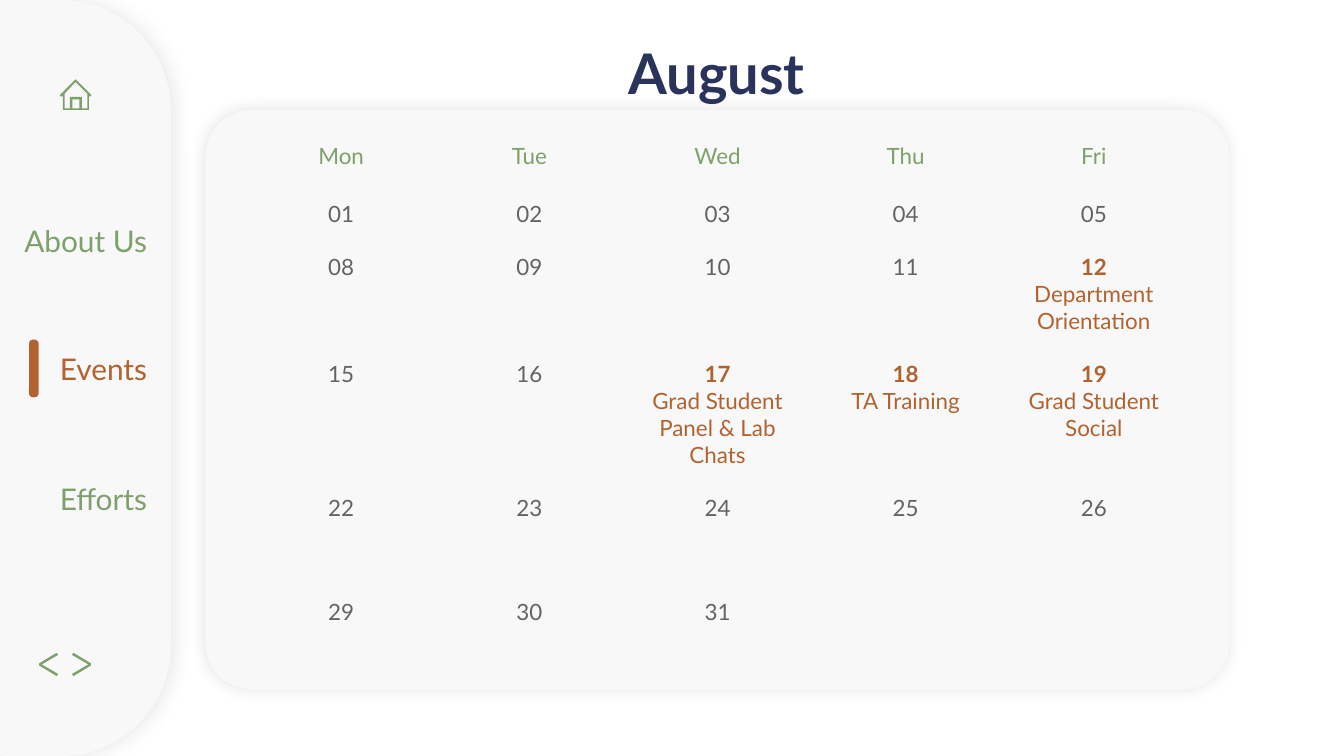
from lxml.etree import SubElement
from pptx import Presentation
from pptx.dml.color import RGBColor
from pptx.enum.shapes import MSO_SHAPE as Shape
from pptx.enum.text import MSO_ANCHOR as Anchor, MSO_AUTO_SIZE as AutoSize, PP_ALIGN as Align
from pptx.oxml.ns import qn
from pptx.util import Cm, Pt

PALE = RGBColor(0xF8, 0xF8, 0xF8)
NAVY = RGBColor(0x29, 0x33, 0x5C)
GREEN = RGBColor(0x7E, 0xA1, 0x6B)
RUST = RGBColor(0xB2, 0x62, 0x2F)
GREY = RGBColor(0x63, 0x63, 0x63)
SHADE = RGBColor(0x43, 0x43, 0x43)

FONT = "Lato"
INSET = Cm(0.25)
NO_STYLE = "{2D5ABB26-0587-4C30-8999-92F81FD0307C}"

DAYS = ["Mon", "Tue", "Wed", "Thu", "Fri"]
LAST_DATE = 31
EVENTS = {
    12: "Department Orientation",
    17: "Grad Student Panel & Lab Chats",
    18: "TA Training",
    19: "Grad Student Social",
}
ROW_HEIGHTS = [1.19, 0.91, 1.37, 1.96, 1.96, 1.96]
MENU = [("About Us", 4, GREEN), ("Events", 6.42, RUST), ("Efforts", 8.88, GREEN)]

# Icon outlines, in hundredths of a centimetre
HOUSE = [
    [(143, 150), (173, 180), (170, 183), (168, 181), (168, 208),
     (119, 208), (119, 181), (116, 183), (113, 180)],
    [(143, 155), (165, 177), (165, 205), (155, 205), (155, 183),
     (132, 183), (132, 205), (122, 205), (122, 177)],
    [(137, 188), (150, 188), (150, 205), (137, 205)],
]
BACK = [[(107, 1234), (110, 1238), (79, 1256), (110, 1274), (107, 1278),
         (74, 1258), (74, 1254)]]
NEXT = [[(246 - x, y) for x, y in BACK[0]]]


def add_run(para, text, size, color, bold=False):
    span = para.add_run()
    span.text = text
    font = span.font
    font.name, font.size, font.bold = FONT, Pt(size), bold
    font.color.rgb = color


def set_insets(frame):
    """Give a text frame or a table cell the same inset on all sides."""
    frame.margin_left = frame.margin_right = INSET
    frame.margin_top = frame.margin_bottom = INSET


def paint(shape, color):
    shape.shadow.inherit = False
    shape.fill.solid()
    shape.fill.fore_color.rgb = color
    shape.line.fill.background()


def add_panel(page, left, top, width, height, rounding, color):
    panel = page.shapes.add_shape(
        Shape.ROUNDED_RECTANGLE, Cm(left), Cm(top), Cm(width), Cm(height))
    panel.adjustments[0] = rounding
    paint(panel, color)
    return panel


def add_shadow(shape, color, opacity, blur, distance):
    effects = shape._element.spPr.find(qn("a:effectLst"))
    shadow = SubElement(effects, qn("a:outerShdw"), blurRad=str(Pt(blur)),
                        dist=str(Pt(distance)), dir="0", rotWithShape="0")
    tint = SubElement(shadow, qn("a:srgbClr"), val=str(color))
    SubElement(tint, qn("a:alpha"), val=str(opacity * 1000))


def add_icon(page, outlines):
    """Draw a filled icon; outlines after the first cut holes or fill them."""
    first, *others = outlines
    builder = page.shapes.build_freeform(*first[0], scale=Cm(0.01))
    builder.add_line_segments(first[1:], close=True)
    for outline in others:
        builder.move_to(*outline[0])
        builder.add_line_segments(outline[1:], close=True)
    paint(builder.convert_to_shape(), GREEN)


def place_title(page, text):
    title = page.shapes.title
    title.left, title.top, title.width, title.height = Cm(7.54), Cm(0.48), Cm(12.01), Cm(1.6)
    page.shapes._spTree.append(title._element)  # in front of the panels
    frame = title.text_frame
    frame.auto_size = AutoSize.NONE
    frame.vertical_anchor = Anchor.TOP
    set_insets(frame)
    para = frame.paragraphs[0]
    para.alignment = Align.CENTER
    add_run(para, text, 30, NAVY, bold=True)


def add_menu_item(page, text, top, color):
    box = page.shapes.add_textbox(Cm(0), Cm(top), Cm(3.03), Cm(1.09))
    frame = box.text_frame
    frame.word_wrap = True
    frame.vertical_anchor = Anchor.MIDDLE
    set_insets(frame)
    para = frame.paragraphs[0]
    para.alignment = Align.RIGHT
    add_run(para, text, 16, color)


def fill_cell(cell, heading, color, bold=False, note=None):
    para = cell.text_frame.paragraphs[0]
    para.alignment = Align.CENTER
    add_run(para, heading, 12, color, bold)
    if note:
        para = cell.text_frame.add_paragraph()
        para.alignment = Align.CENTER
        add_run(para, note, 12, color)


def add_calendar(page):
    frame = page.shapes.add_table(
        len(ROW_HEIGHTS), len(DAYS), Cm(4.67), Cm(2.34), Cm(17.78), Cm(10.67))
    table = frame.table
    table.first_row = table.horz_banding = False
    table._tbl.tblPr.find(qn("a:tableStyleId")).text = NO_STYLE
    for row, height in zip(table.rows, ROW_HEIGHTS):
        row.height = Cm(height)
    for cell in table.iter_cells():
        cell.fill.background()
        set_insets(cell)
    for column, day in enumerate(DAYS):
        cell = table.cell(0, column)
        cell.vertical_anchor = Anchor.MIDDLE
        fill_cell(cell, day, GREEN)
        # The first of the month is a Monday
        for week, date in enumerate(range(column + 1, LAST_DATE + 1, 7), start=1):
            event = EVENTS.get(date)
            fill_cell(table.cell(week, column), f"{date:02}",
                      RUST if event else GREY, bool(event), event)


def main():
    deck = Presentation()
    deck.slide_width, deck.slide_height = Cm(25.4), Cm(14.29)
    page = deck.slides.add_slide(deck.slide_layouts[5])

    sidebar = add_panel(page, -1.85, 0, 5.08, 14.29, 0.41, PALE)
    add_shadow(sidebar, GREY, 14, 10.1, 1.5)
    card = add_panel(page, 3.88, 2.08, 19.35, 10.95, 0.08, PALE)
    add_shadow(card, SHADE, 15, 7.9, 0)

    place_title(page, "August")
    for icon in (HOUSE, BACK, NEXT):
        add_icon(page, icon)
    add_calendar(page)
    for text, top, color in MENU:
        add_menu_item(page, text, top, color)
    add_panel(page, 0.55, 6.42, 0.18, 1.09, 0.41, RUST)

    deck.save("out.pptx")


if __name__ == "__main__":
    main()
